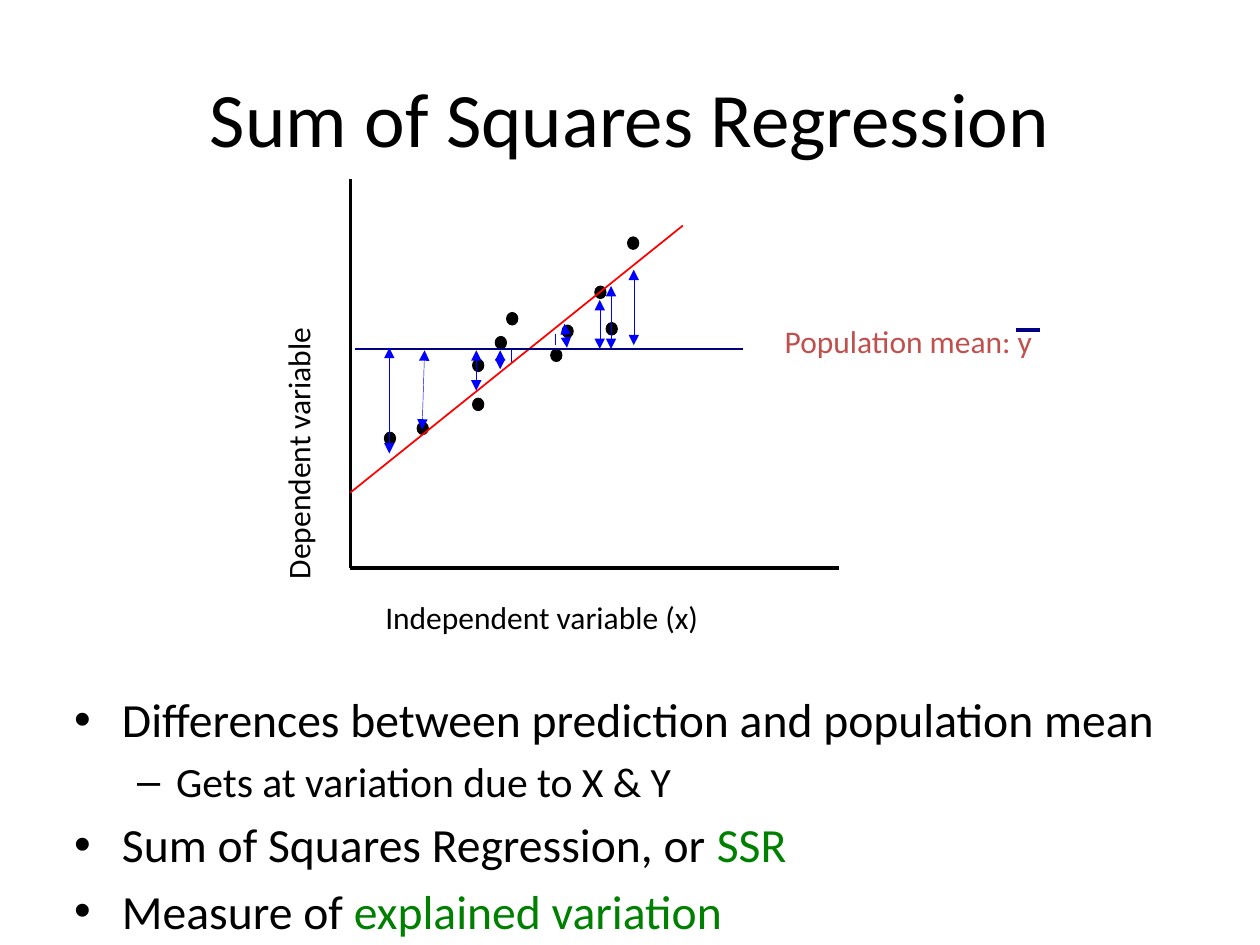
from lxml.etree import SubElement
from pptx import Presentation
from pptx.dml.color import RGBColor
from pptx.enum.shapes import MSO_CONNECTOR, MSO_SHAPE
from pptx.enum.text import MSO_ANCHOR, PP_ALIGN
from pptx.oxml.ns import qn
from pptx.util import Inches, Pt

BLACK = RGBColor(0x00, 0x00, 0x00)
RED = RGBColor(0xFF, 0x00, 0x00)
BLUE = RGBColor(0x00, 0x00, 0xFF)
NAVY = RGBColor(0x00, 0x00, 0x80)
GREEN = RGBColor(0x00, 0x80, 0x00)
BRICK = RGBColor(0xC0, 0x50, 0x4D)

FONT = "Calibri"
DOT_W, DOT_H = 0.09, 0.1

# Left and top of each data point
DOTS = [
    (3.05, 3.43), (3.31, 3.35), (3.75, 3.16), (3.75, 2.85),
    (3.93, 2.67), (4.02, 2.48), (4.37, 2.77), (4.46, 2.58),
    (4.72, 2.27), (4.81, 2.56), (4.98, 1.88),
]

# Gaps between the fitted line and the mean: x1, y1, x2, y2
GAPS = [
    (3.09, 2.76, 3.09, 3.6), (3.37, 2.78, 3.35, 3.41),
    (3.78, 2.78, 3.78, 3.1), (3.97, 2.78, 3.97, 2.93),
    (4.48, 2.57, 4.5, 2.76), (4.76, 2.38, 4.76, 2.77),
    (4.85, 2.27, 4.85, 2.77), (5.03, 2.14, 5.03, 2.74),
]
TICKS = [(4.41, 2.65, 4.41, 2.74), (4.06, 2.78, 4.06, 2.87)]

# Level and coloured runs of each bullet
POINTS = [
    (0, [("Differences between prediction and population mean", BLACK)]),
    (1, [("Gets at variation due to X & Y", BLACK)]),
    (0, [("Sum of Squares Regression, or ", BLACK), ("SSR", GREEN)]),
    (0, [("Measure of ", BLACK), ("explained variation", GREEN)]),
]
# Bullet, size, space before, margin and indent of each level
LEVELS = [("•", 27.2, 5.4, 0.38, -0.38), ("–", 23.8, 4.8, 0.81, -0.31)]


def add_box(slide, left, top, width, height):
    box = slide.shapes.add_textbox(
        Inches(left), Inches(top), Inches(width), Inches(height))
    box.text_frame.word_wrap = True
    return box


def add_label(slide, text, place, size=18, color=BLACK):
    box = add_box(slide, *place)
    para = box.text_frame.paragraphs[0]
    para.text = text
    para.font.name = FONT
    para.font.size = Pt(size)
    para.font.color.rgb = color
    return box


def add_line(slide, ends, color, width, arrows=False):
    line = slide.shapes.add_connector(
        MSO_CONNECTOR.STRAIGHT, *[Inches(v) for v in ends])
    line.line.color.rgb = color
    line.line.width = Pt(width)
    if arrows:
        for tag in ("a:headEnd", "a:tailEnd"):
            SubElement(line.line._get_or_add_ln(), qn(tag), type="triangle")
    SubElement(line._element.spPr, qn("a:effectLst"))


def add_dot(slide, left, top):
    dot = slide.shapes.add_shape(
        MSO_SHAPE.OVAL, Inches(left), Inches(top),
        Inches(DOT_W), Inches(DOT_H))
    dot.shadow.inherit = False
    dot.fill.solid()
    dot.fill.fore_color.rgb = BLACK
    dot.line.color.rgb = BLACK
    dot.line.width = Pt(0.5)


def add_point(para, level, runs):
    """Fill one bulleted paragraph."""
    mark, size, gap, margin, indent = LEVELS[level]
    para.level = level
    props = para._p.get_or_add_pPr()
    props.set("marL", str(Inches(margin)))
    props.set("indent", str(Inches(indent)))
    SubElement(props, qn("a:buFont"), typeface="Arial")
    SubElement(props, qn("a:buChar"), char=mark)
    para.space_before = Pt(gap)
    para.font.name = FONT
    para.font.size = Pt(size)
    for text, color in runs:
        run = para.add_run()
        run.text = text
        run.font.color.rgb = color


def add_points(slide):
    frame = add_box(slide, 0.49, 5.43, 9, 1.9).text_frame
    for i, (level, runs) in enumerate(POINTS):
        para = frame.add_paragraph() if i else frame.paragraphs[0]
        add_point(para, level, runs)


def add_plot(slide):
    add_line(slide, (2.78, 1.42, 2.78, 4.51), BLACK, 2)
    add_line(slide, (2.78, 4.51, 6.66, 4.51), BLACK, 2)
    for left, top in DOTS:
        add_dot(slide, left, top)
    add_label(slide, "Independent variable (x)", (2.96, 4.7, 3.06, 0.46))
    side = add_label(slide, "Dependent variable", (0.83, 2.94, 3.09, 0.42))
    side.rotation = 270
    add_line(slide, (2.78, 3.91, 5.42, 1.79), RED, 1)
    add_line(slide, (2.82, 2.77, 5.9, 2.77), NAVY, 1.25)
    add_label(slide, "Population mean: y", (6.13, 2.51, 2.47, 0.46),
              color=BRICK)
    add_line(slide, (8.06, 2.62, 8.25, 2.62), NAVY, 2)
    for ends in GAPS:
        add_line(slide, ends, BLUE, 0.25, arrows=True)
    for ends in TICKS:
        add_line(slide, ends, BLUE, 0.25)


def main():
    deck = Presentation()
    deck.slide_width, deck.slide_height = Inches(10), Inches(7.5)
    slide = deck.slides.add_slide(deck.slide_layouts[6])
    title = add_label(slide, "Sum of Squares Regression",
                      (0.5, 0.3, 9, 1.25), size=44)
    title.text_frame.vertical_anchor = MSO_ANCHOR.MIDDLE
    title.text_frame.paragraphs[0].alignment = PP_ALIGN.CENTER
    add_points(slide)
    add_plot(slide)
    deck.save("out.pptx")


if __name__ == "__main__":
    main()
